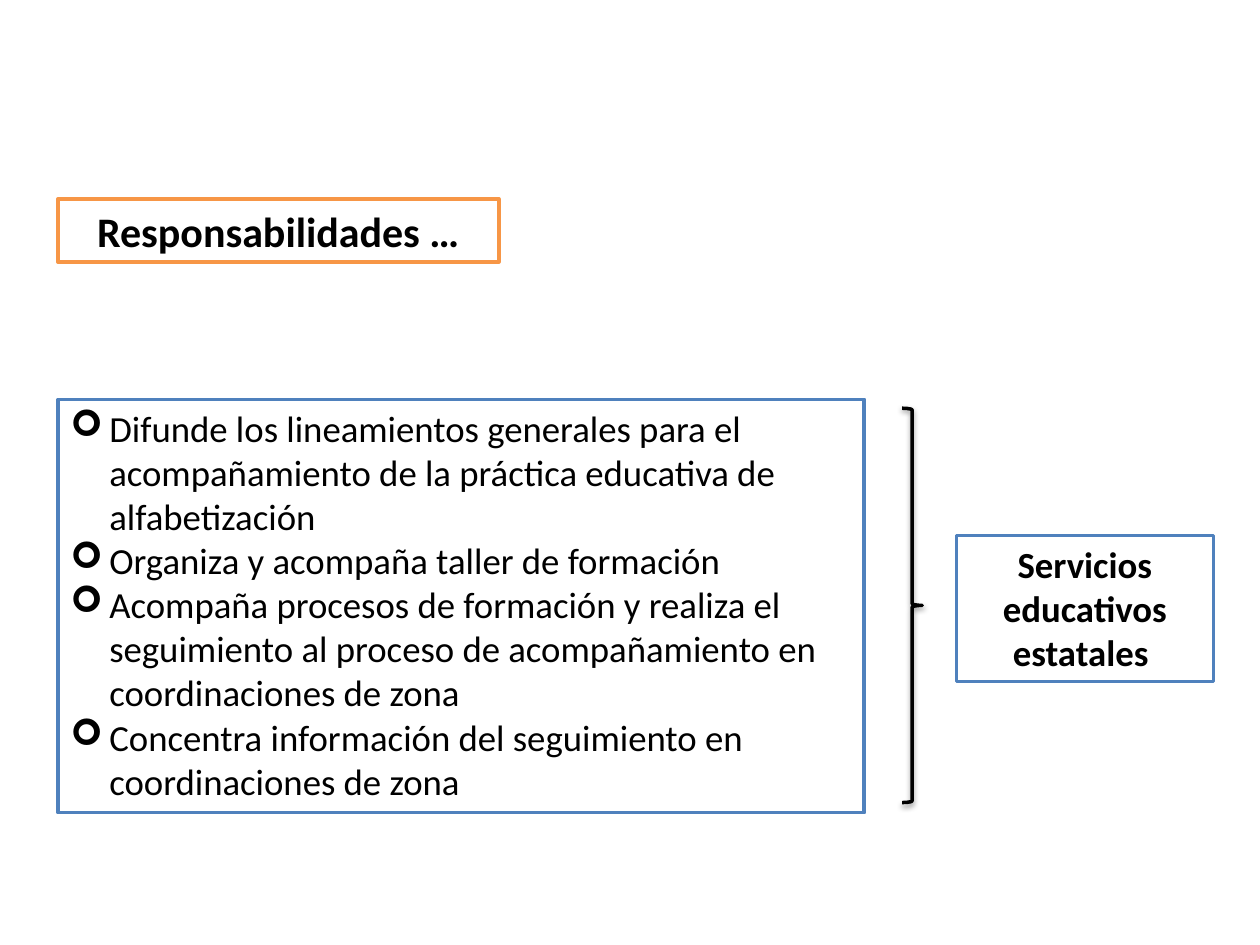
"""Build a slide on the responsibilities of the state education services."""
from lxml import etree
from pptx import Presentation
from pptx.dml.color import RGBColor
from pptx.enum import shapes, text
from pptx.oxml import ns
from pptx.util import Inches, Pt

BLACK = RGBColor(0x00, 0x00, 0x00)
WHITE = RGBColor(0xFF, 0xFF, 0xFF)
BLUE = RGBColor(0x4F, 0x81, 0xBD)
ORANGE = RGBColor(0xF7, 0x96, 0x46)

FONT = "Calibri"
BULLET = "➢"
INDENT = Inches(0.31)

TITLE = ["Responsabilidades …"]
OWNER = ["Servicios educativos estatales "]
DUTIES = [
    "Difunde los lineamientos generales para el acompañamiento de la práctica educativa de alfabetización",
    "Organiza y acompaña taller de formación",
    "Acompaña procesos de formación y realiza el seguimiento al proceso de acompañamiento en coordinaciones de zona",
    "Concentra información del seguimiento en coordinaciones de zona",
]

BOXES = [
    (OWNER, (7.59, 4.25, 2.04, 1.16), BLUE, 21, False),
    (DUTIES, (0.46, 3.17, 6.4, 3.28), BLUE, 21, True),
    (TITLE, (0.46, 1.58, 3.5, 0.5), ORANGE, 24, False),
]
BRACE = (7.16, 3.24, 0.16, 3.13)


def add_outline(page, preset, place, color):
    shape = page.shapes.add_shape(preset, *map(Inches, place))
    shape.shadow.inherit = False
    shape.line.color.rgb = color
    shape.line.width = Pt(2)
    return shape


def add_bullet(para):
    properties = para._p.get_or_add_pPr()
    properties.set("marL", str(INDENT))
    properties.set("indent", str(-INDENT))
    etree.SubElement(properties, ns.qn("a:buFont"), typeface="Wingdings")
    etree.SubElement(properties, ns.qn("a:buChar"), char=BULLET)


def add_box(page, lines, place, color, size, bulleted):
    box = add_outline(page, shapes.MSO_SHAPE.RECTANGLE, place, color)
    box.fill.solid()
    box.fill.fore_color.rgb = WHITE
    frame = box.text_frame
    frame.text = "\n".join(lines)
    frame.word_wrap = True
    frame.auto_size = text.MSO_AUTO_SIZE.SHAPE_TO_FIT_TEXT
    frame.vertical_anchor = text.MSO_ANCHOR.TOP
    for para in frame.paragraphs:
        para.alignment = text.PP_ALIGN.LEFT if bulleted else text.PP_ALIGN.CENTER
        if bulleted:
            add_bullet(para)
        for span in para.runs:
            span.font.name = FONT
            span.font.size = Pt(size)
            span.font.bold = not bulleted
            span.font.color.rgb = BLACK


def add_brace(page):
    brace = add_outline(page, shapes.MSO_SHAPE.RIGHT_BRACE, BRACE, BLACK)
    brace.fill.background()
    effects = brace._element.spPr.find(ns.qn("a:effectLst"))
    shadow = etree.SubElement(
        effects, ns.qn("a:outerShdw"), blurRad=str(Pt(3.1)), dist=str(Pt(1.6)),
        dir="5400000", rotWithShape="0")
    tint = etree.SubElement(shadow, ns.qn("a:srgbClr"), val=str(BLACK))
    etree.SubElement(tint, ns.qn("a:alpha"), val="38000")


def main():
    deck = Presentation()
    deck.slide_width, deck.slide_height = Inches(10), Inches(7.5)
    page = deck.slides.add_slide(deck.slide_layouts[6])
    for box in BOXES:
        add_box(page, *box)
    add_brace(page)
    deck.save("out.pptx")


if __name__ == "__main__":
    main()
